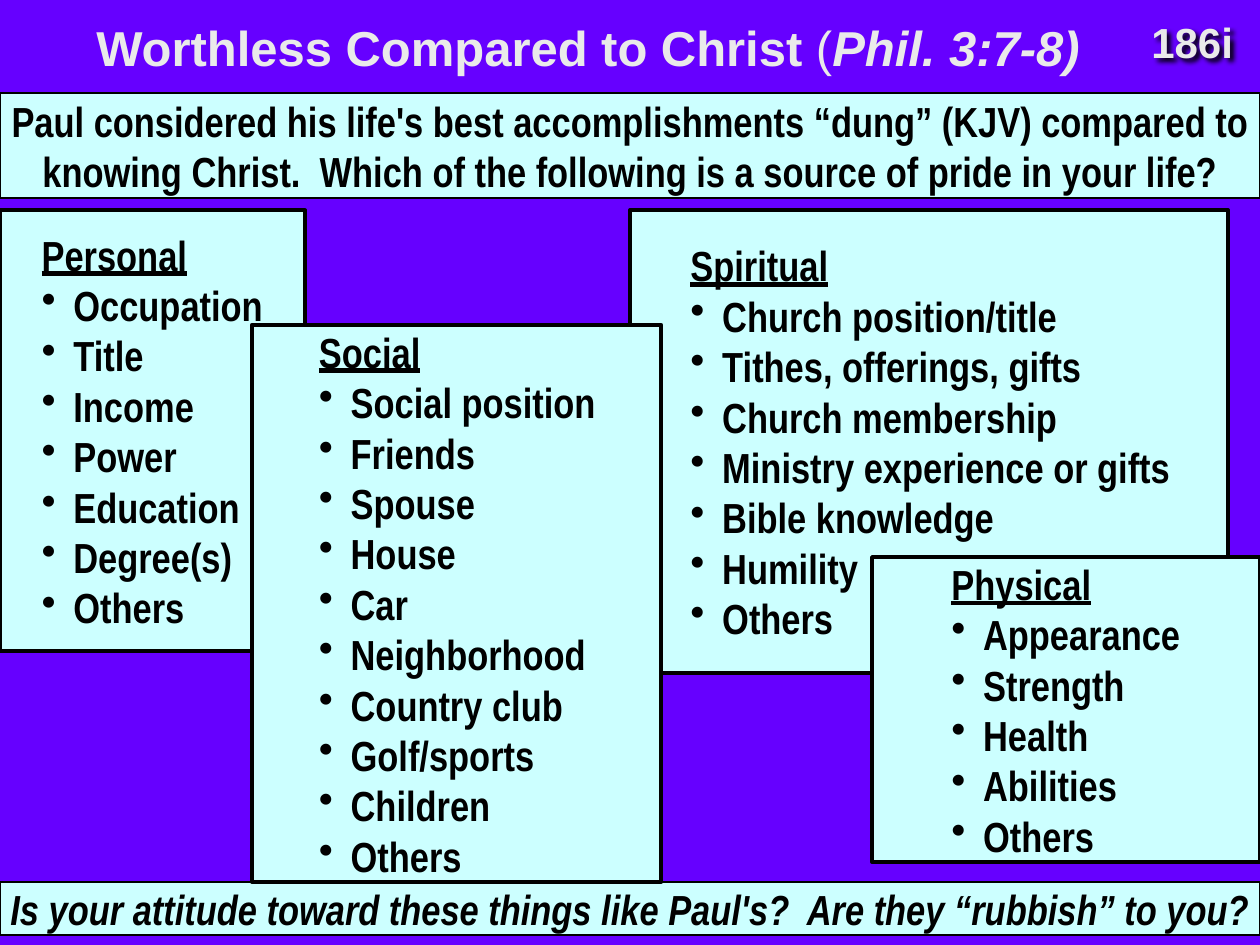
"""Builds a slide of overlapping lists of things people take pride in."""
import lxml.etree
import pptx
import pptx.dml.color
import pptx.enum.text
import pptx.oxml
import pptx.oxml.ns
import pptx.util

Cm = pptx.util.Cm
PP_ALIGN = pptx.enum.text.PP_ALIGN
MIDDLE = pptx.enum.text.MSO_ANCHOR.MIDDLE
PURPLE, PALE, BLACK, LIGHT = "6600FF", "CCFFFF", "000000", "EAEAEA"
WIDTH, HEIGHT, INDENT = 25.4, 19.05, 0.64

TITLE = [
    ("Worthless Compared to Christ", True, False),
    (" (", False, False),
    ("Phil. 3:7-8)", True, True),
]
NUMBER = "186i"
BANNERS = [
    ("Paul considered his life's best accomplishments “dung” (KJV) compared to "
     "knowing Christ.  Which of the following is a source of pride in your life?",
     1.88, 2.11, False),
    ("Is your attitude toward these things like Paul's?  Are they “rubbish” to you?",
     17.78, 1.07, True),
]
CARDS = [
    ("Spiritual", (12.7, 4.24, 12.06, 9.32), 1.22,
     ["Church position/title", "Tithes, offerings, gifts", "Church membership",
      "Ministry experience or gifts", "Bible knowledge", "Humility", "Others"]),
    ("Physical", (17.58, 11.23, 7.82, 6.15), 1.6,
     ["Appearance", "Strength", "Health", "Abilities", "Others"]),
    ("Personal", (0, 4.24, 6.15, 8.89), 0.84,
     ["Occupation", "Title", "Income", "Power", "Education", "Degree(s)", "Others"]),
    ("Social", (5.08, 6.55, 8.25, 11.23), 1.35,
     ["Social position", "Friends", "Spouse", "House", "Car", "Neighborhood",
      "Country club", "Golf/sports", "Children", "Others"]),
]
SHADOW = (
    '<a:effectLst %s><a:outerShdw blurRad="38100" dist="38100" dir="2700000">'
    '<a:srgbClr val="000000"/></a:outerShdw></a:effectLst>'
) % pptx.oxml.ns.nsdecls("a")


def paint(color_format, color):
    color_format.rgb = pptx.dml.color.RGBColor.from_string(color)


def add_run(paragraph, text, size=24, face="Arial Narrow", color=BLACK,
            bold=True, italic=False, underline=False):
    run = paragraph.add_run()
    run.text = text
    font = run.font
    font.size, font.name = pptx.util.Pt(size), face
    font.bold, font.italic, font.underline = bold, italic, underline
    paint(font.color, color)


def add_panel(slide, place, line_width, left_inset=0):
    panel = slide.shapes.add_shape(
        pptx.enum.shapes.MSO_SHAPE.RECTANGLE, *map(Cm, place))
    panel.shadow.inherit = False
    panel.fill.solid()
    paint(panel.fill.fore_color, PALE)
    paint(panel.line.color, BLACK)
    panel.line.width = pptx.util.Pt(line_width)
    frame = panel.text_frame
    frame.margin_left = Cm(left_inset)
    frame.margin_top = frame.margin_right = frame.margin_bottom = 0
    frame.vertical_anchor = MIDDLE
    frame.word_wrap = True
    return frame


def add_banner(slide, text, top, height, closing):
    frame = add_panel(slide, (0, top, WIDTH, height), 1)
    frame.word_wrap = not closing
    frame.paragraphs[0].alignment = PP_ALIGN.CENTER
    add_run(frame.paragraphs[0], text, italic=closing)


def add_card(slide, heading, place, left_inset, items):
    frame = add_panel(slide, place, 2.25, left_inset)
    for index, text in enumerate([heading] + items):
        entry = frame.paragraphs[0] if index == 0 else frame.add_paragraph()
        entry.alignment = PP_ALIGN.LEFT
        properties = entry._p.get_or_add_pPr()
        properties.set("marL", str(Cm(INDENT)))
        properties.set("indent", str(-Cm(INDENT)))
        if index:
            bullet = lxml.etree.SubElement(properties, pptx.oxml.ns.qn("a:buChar"))
            bullet.set("char", "•")
        add_run(entry, text, underline=index == 0)


def add_title(slide):
    title = slide.shapes.title
    title.left, title.top, title.width, title.height = map(Cm, (1.48, 0, 20.75, 1.88))
    title.text_frame.vertical_anchor = MIDDLE
    title.text_frame.word_wrap = True
    heading = title.text_frame.paragraphs[0]
    heading.alignment = PP_ALIGN.CENTER
    for text, bold, italic in TITLE:
        add_run(heading, text, 28, "Arial", LIGHT, bold, italic)


def add_number(slide):
    number = slide.shapes.add_textbox(*map(Cm, (22.96, 0.2, 2.24, 1.27)))
    number.text_frame.word_wrap = False
    add_run(number.text_frame.paragraphs[0], NUMBER, face="Arial", color=LIGHT)
    number._element.spPr.append(pptx.oxml.parse_xml(SHADOW))


def main():
    deck = pptx.Presentation()
    deck.slide_width, deck.slide_height = Cm(WIDTH), Cm(HEIGHT)
    slide = deck.slides.add_slide(deck.slide_layouts[5])
    slide.background.fill.solid()
    paint(slide.background.fill.fore_color, PURPLE)
    add_title(slide)
    add_number(slide)
    for banner in BANNERS:
        add_banner(slide, *banner)
    for card in CARDS:
        add_card(slide, *card)
    deck.save("out.pptx")


if __name__ == "__main__":
    main()
